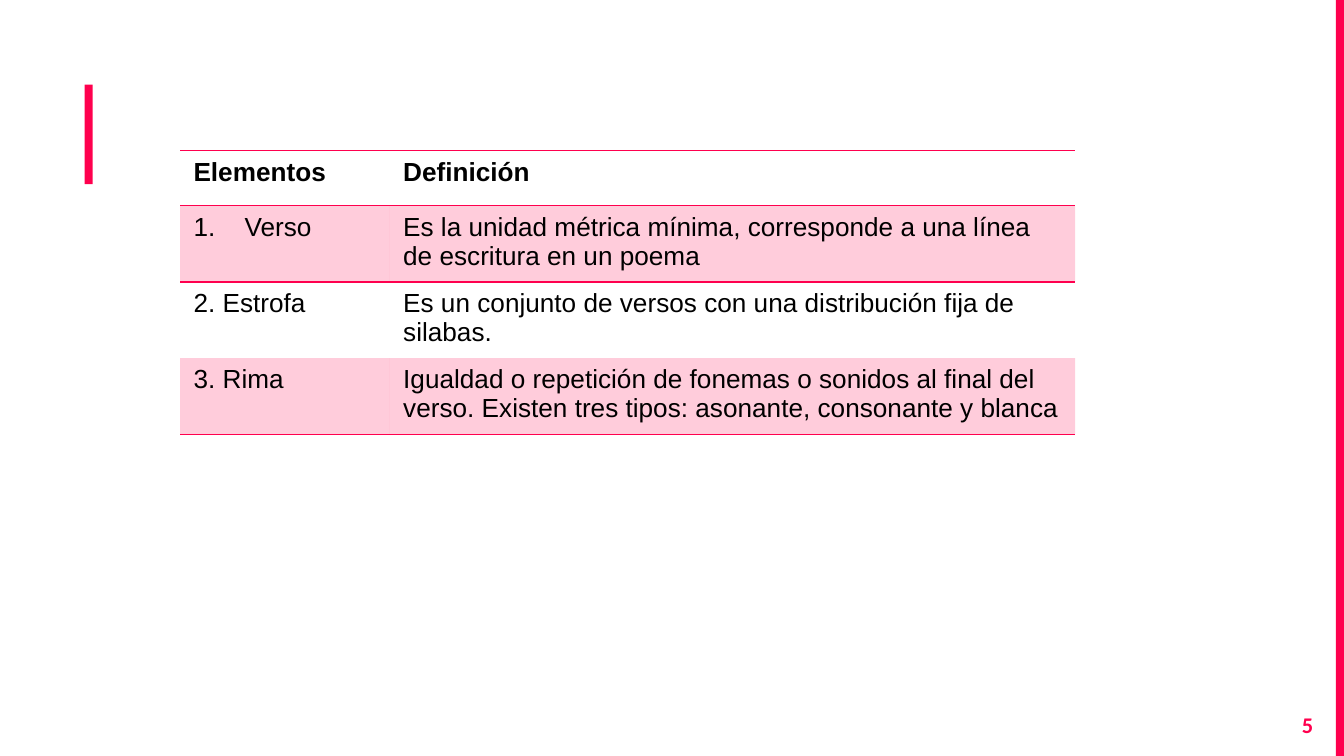
from lxml import etree
from pptx import Presentation
from pptx.dml.color import RGBColor
from pptx.enum.shapes import MSO_SHAPE
from pptx.enum.text import MSO_ANCHOR, PP_ALIGN
from pptx.oxml import parse_xml
from pptx.oxml.ns import qn
from pptx.util import Inches, Pt

RECT = MSO_SHAPE.RECTANGLE
TOP = MSO_ANCHOR.TOP
RIGHT = PP_ALIGN.RIGHT
PINK = "FF004E"
BLACK = "000000"
NO_GRID = "{2D5ABB26-0587-4C30-8999-92F81FD0307C}"
NS = "http://schemas.openxmlformats.org/drawingml/2006/main"
WIDE = 10
HIGH = WIDE * 9 / 16
WIDTHS = [1.56, 5.1]
ROW_HIGH = 0.41
ROWS = [
    ("Elementos", "Definición"),
    ("Verso", "Es la unidad métrica mínima, corresponde a una línea de escritura en un poema"),
    ("2. Estrofa", "Es un conjunto de versos con una distribución fija de silabas."),
    ("3. Rima", "Igualdad o repetición de fonemas o sonidos al final del verso. "
                "Existen tres tipos: asonante, consonante y blanca"),
]
RULES = ["TB", "T", "", "B"]


def color(code):
    """Turn a hex string into a colour."""
    return RGBColor.from_string(code)


def style(para, font, size, code, bold):
    """Format every run of a paragraph."""
    for run in para.runs:
        run.font.name = font
        run.font.size = Pt(size)
        run.font.bold = bold
        run.font.color.rgb = color(code)


def add_bar(slide, left, top, width, height):
    """Draw a plain accent bar."""
    bar = slide.shapes.add_shape(RECT, Inches(left), Inches(top), Inches(width), Inches(height))
    bar.shadow.inherit = False
    bar.fill.solid()
    bar.fill.fore_color.rgb = color(PINK)
    bar.line.fill.background()


def add_page(slide, left, top, width, height, text):
    """Write the page number, right-aligned in its box."""
    box = slide.shapes.add_textbox(Inches(left), Inches(top), Inches(width), Inches(height))
    frame = box.text_frame
    frame.word_wrap = True
    frame.vertical_anchor = TOP
    frame.margin_top = frame.margin_bottom = Inches(0.1)
    frame.text = text
    frame.paragraphs[0].alignment = RIGHT
    style(frame.paragraphs[0], "Calibri", 12, PINK, True)


def add_rules(cell, sides):
    """Rule the given sides of a cell, in schema order."""
    props = cell._tc.get_or_add_tcPr()
    for spot, side in enumerate(sides):
        props.insert(spot, parse_xml(
            f'<a:ln{side} xmlns:a="{NS}" w="{Pt(1)}"><a:solidFill>'
            f'<a:srgbClr val="{PINK}"/></a:solidFill></a:ln{side}>'))


def tint(cell):
    """Fill a cell with the accent at 20 percent."""
    cell.fill.solid()
    cell.fill.fore_color.rgb = color(PINK)
    tone = cell._tc.tcPr.find(".//" + qn("a:srgbClr"))
    etree.SubElement(tone, qn("a:alpha"), val="20000")


def number(para):
    """Give a paragraph an automatic number with a hanging indent."""
    props = para._p.get_or_add_pPr()
    props.set("marL", str(Inches(0.38)))
    props.set("indent", str(-Inches(0.38)))
    etree.SubElement(props, qn("a:buFont"), typeface="+mj-lt")
    etree.SubElement(props, qn("a:buAutoNum"), type="arabicPeriod")


def add_grid(slide, left, top):
    """Build the table of elements and definitions."""
    frame = slide.shapes.add_table(len(ROWS), len(WIDTHS), Inches(left), Inches(top),
                                   Inches(sum(WIDTHS)), Inches(ROW_HIGH * len(ROWS)))
    table = frame.table
    table.horz_banding = False
    table.first_row = False
    table._tbl.tblPr.find(qn("a:tableStyleId")).text = NO_GRID
    for col, width in zip(table.columns, WIDTHS):
        col.width = Inches(width)
    for r, texts in enumerate(ROWS):
        table.rows[r].height = Inches(ROW_HIGH)
        for c, text in enumerate(texts):
            cell = table.cell(r, c)
            cell.text_frame.text = text
            style(cell.text_frame.paragraphs[0], "Arial", 14, BLACK, r == 0)
            if r % 2:
                tint(cell)
            else:
                cell.fill.background()
            add_rules(cell, RULES[r])
    number(table.cell(1, 0).text_frame.paragraphs[0])


def main():
    """Build and save the slide."""
    deck = Presentation()
    deck.slide_width = Inches(WIDE)
    deck.slide_height = Inches(HIGH)
    slide = deck.slides.add_slide(deck.slide_layouts[6])
    add_bar(slide, 0.63, 0.63, 0.06, 0.74)
    add_bar(slide, WIDE - 0.06, 0, 0.06, HIGH)
    add_page(slide, 9.27, 5.19, 0.6, 0.43, "5")
    add_grid(slide, 1.34, 1.12)
    deck.save("out.pptx")


if __name__ == "__main__":
    main()
